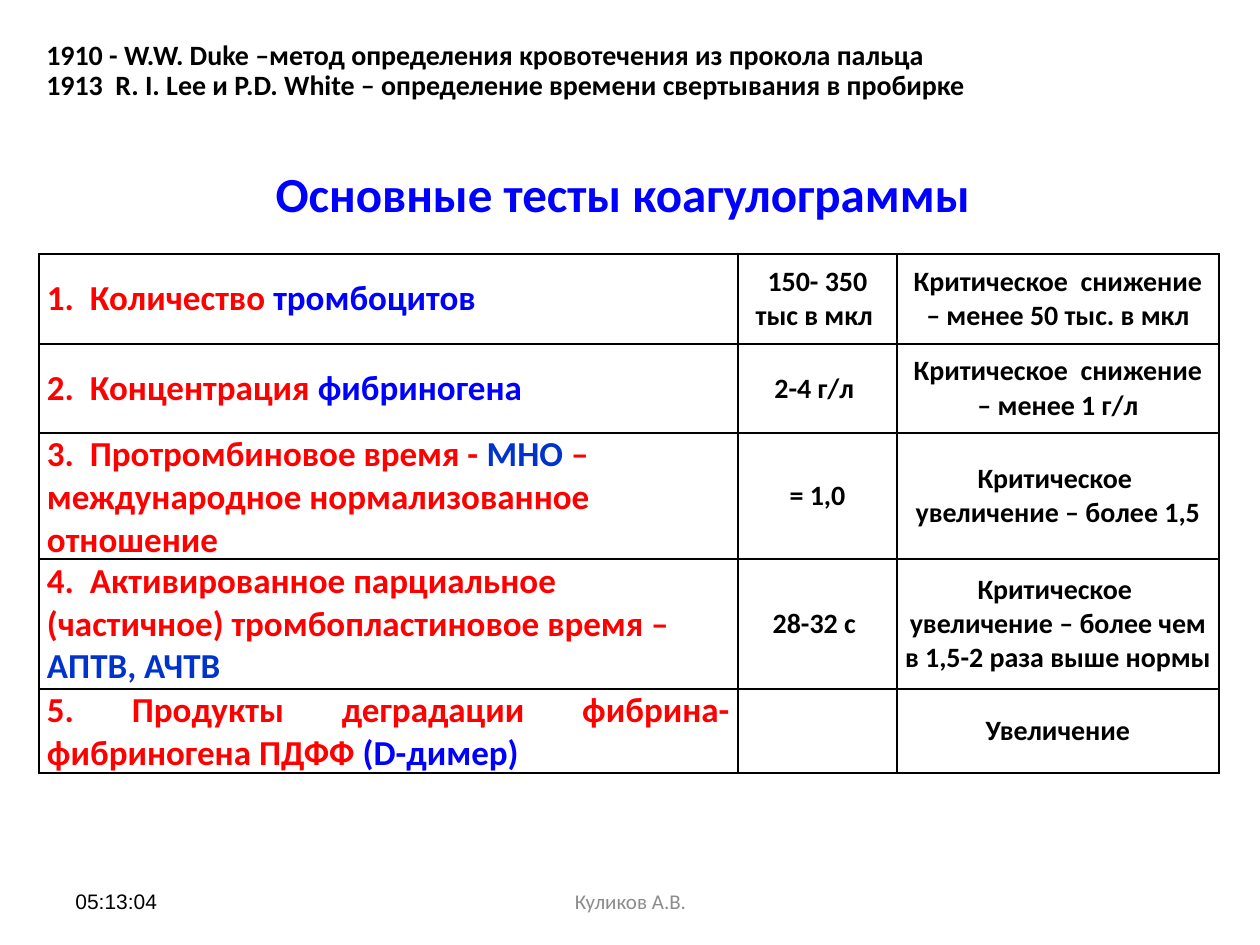
from lxml import etree
from pptx import Presentation
from pptx.dml.color import RGBColor
from pptx.enum.text import MSO_ANCHOR, PP_ALIGN
from pptx.oxml.ns import qn
from pptx.util import Emu, Pt

MIDDLE, TOP = MSO_ANCHOR.MIDDLE, MSO_ANCHOR.TOP
LEFT, CENTER, JUSTIFY = PP_ALIGN.LEFT, PP_ALIGN.CENTER, PP_ALIGN.JUSTIFY

BLACK = RGBColor(0x00, 0x00, 0x00)
RED = RGBColor(0xFF, 0x00, 0x00)
BLUE = RGBColor(0x00, 0x00, 0xFF)
NAVY = RGBColor(0x00, 0x33, 0xCC)
GRAY = RGBColor(0x8C, 0x8C, 0x8C)

PX_PER_INCH = 126
COLUMN_WIDTHS = [699, 159, 322]
ROW_HEIGHTS = [90, 89, 126, 130, 84]
CELL_INSET = 8

HISTORY = [
    "1910 - W.W. Duke –метод определения кровотечения из прокола пальца",
    "1913  R. I. Lee и P.D. White – определение времени свертывания в пробирке",
]
TESTS = [
    (JUSTIFY, [("1.  Количество ", RED), ("тромбоцитов ", BLUE)],
     "150- 350 тыс в мкл ", "Критическое  снижение – менее 50 тыс. в мкл"),
    (JUSTIFY, [("2.  Концентрация ", RED), ("фибриногена ", BLUE)],
     "2-4 г/л ", "Критическое  снижение – менее 1 г/л"),
    (LEFT, [("3.  Протромбиновое время - ", RED), ("МНО", NAVY),
            (" – международное нормализованное отношение", RED)],
     " = 1,0 ", "Критическое  увеличение – более 1,5"),
    (LEFT, [("4.  Активированное парциальное (частичное) тромбопластиновое время –", RED),
            ("АПТВ, АЧТВ", NAVY)],
     "28-32 с ", "Критическое  увеличение – более чем в 1,5-2 раза выше нормы"),
    (JUSTIFY, [("5. Продукты деградации фибрина-фибриногена ПДФФ ", RED),
               ("(D-димер) ", BLUE)],
     "", "Увеличение"),
]


def px(length):
    return Emu(round(length * 914400 / PX_PER_INCH))


def add_run(paragraph, text, size, color, bold=True, font="Calibri"):
    run = paragraph.add_run()
    run.text = text
    run.font.name = font
    run.font.size = Pt(size)
    run.font.bold = bold
    run.font.color.rgb = color


def add_text_frame(slide, box, anchor):
    frame = slide.shapes.add_textbox(*map(px, box)).text_frame
    frame.word_wrap = True
    frame.vertical_anchor = anchor
    return frame


def place_title(slide, box):
    title = slide.shapes.title
    title.left, title.top, title.width, title.height = map(px, box)
    title.text_frame.vertical_anchor = MIDDLE
    heading = title.text_frame.paragraphs[0]
    heading.alignment = CENTER
    add_run(heading, "Основные тесты коагулограммы", 28, BLUE)


def add_history(slide, box):
    frame = add_text_frame(slide, box, TOP)
    for index, event in enumerate(HISTORY):
        paragraph = frame.add_paragraph() if index else frame.paragraphs[0]
        paragraph.line_spacing = 0.9
        add_run(paragraph, event, 16, BLACK)


def add_footer_note(slide, box, text, alignment, color, font):
    paragraph = add_text_frame(slide, box, MIDDLE).paragraphs[0]
    paragraph.alignment = alignment
    add_run(paragraph, text, 12, color, bold=False, font=font)


def set_borders(cell):
    properties = cell._tc.get_or_add_tcPr()
    for side in ("a:lnL", "a:lnR", "a:lnT", "a:lnB"):
        line = etree.SubElement(properties, qn(side), w=str(Pt(1)))
        fill = etree.SubElement(line, qn("a:solidFill"))
        etree.SubElement(fill, qn("a:srgbClr"), val=str(BLACK))


def fill_cell(cell, runs, size, alignment, space_before):
    set_borders(cell)
    cell.fill.background()
    cell.vertical_anchor = MIDDLE
    cell.margin_left = cell.margin_right = px(CELL_INSET)
    cell.margin_top = cell.margin_bottom = 0
    paragraph = cell.text_frame.paragraphs[0]
    paragraph.alignment = alignment
    paragraph.space_before = Pt(space_before)
    paragraph.space_after = Pt(12)
    for text, color in runs:
        if text:
            add_run(paragraph, text, size, color)


def add_tests_table(slide, left, top):
    box = (left, top, sum(COLUMN_WIDTHS), sum(ROW_HEIGHTS))
    table = slide.shapes.add_table(
        len(TESTS), len(COLUMN_WIDTHS), *map(px, box)).table
    table.first_row = table.horz_banding = False
    for column, width in zip(table.columns, COLUMN_WIDTHS):
        column.width = px(width)
    for row, height, test in zip(table.rows, ROW_HEIGHTS, TESTS):
        row.height = px(height)
        alignment, name_runs, norm, critical = test
        name_cell, norm_cell, critical_cell = row.cells
        fill_cell(name_cell, name_runs, 20, alignment, 24)
        fill_cell(norm_cell, [(norm, BLACK)], 16, CENTER, 12)
        fill_cell(critical_cell, [(critical, BLACK)], 16, CENTER, 12)


def main():
    deck = Presentation()
    deck.slide_width, deck.slide_height = px(1260), px(945)
    slide = deck.slides.add_slide(deck.slide_layouts[5])
    place_title(slide, (223, 165, 799, 55))
    add_footer_note(slide, (63, 876, 294, 50), "05:13:04", LEFT, BLACK, "Arial")
    add_history(slide, (34, 35, 1121, 74))
    add_tests_table(slide, 39, 254)
    add_footer_note(slide, (431, 876, 399, 50), "Куликов А.В.", CENTER, GRAY, "Calibri")
    deck.save("out.pptx")


if __name__ == "__main__":
    main()
